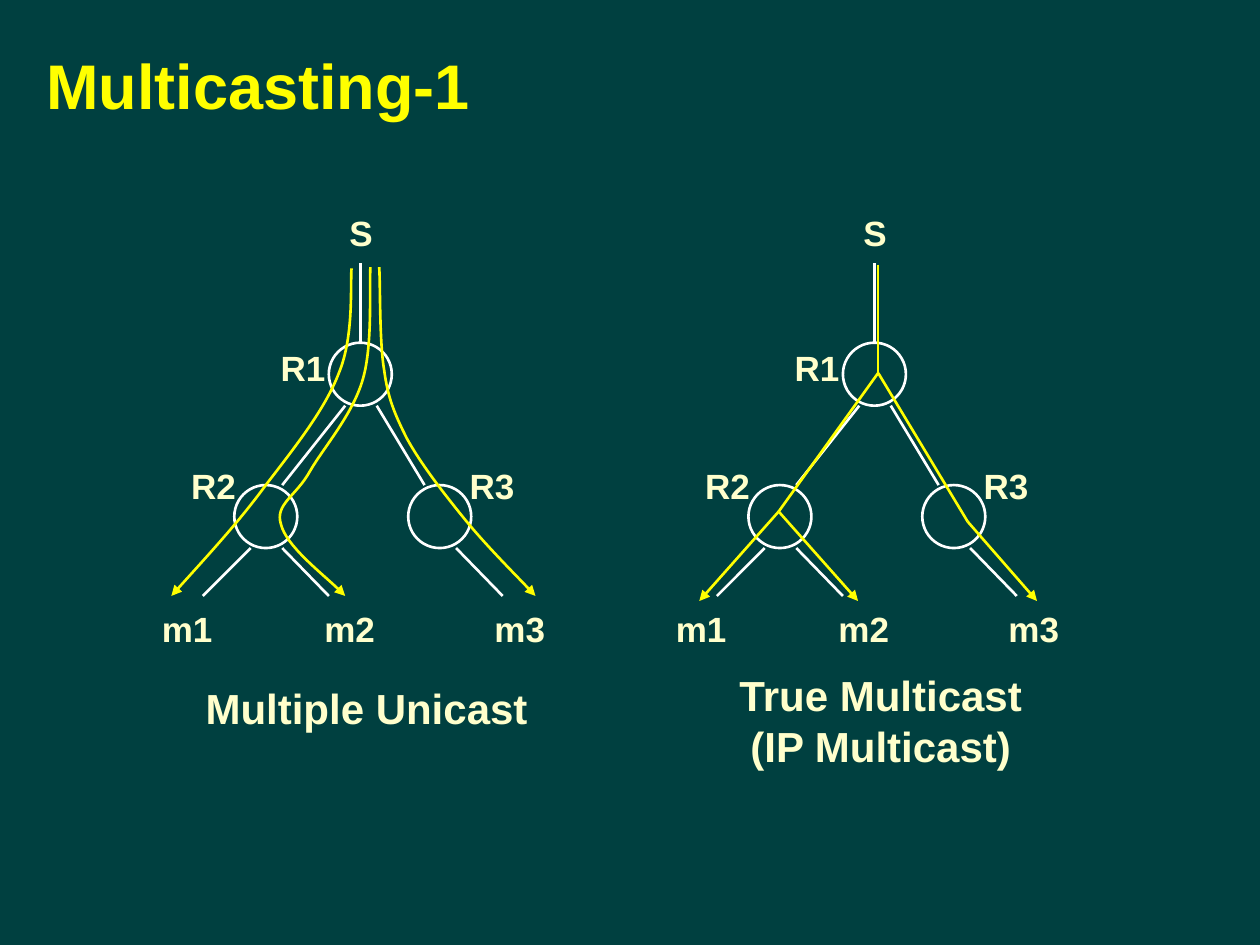
from lxml import etree
from pptx import Presentation
from pptx.dml.color import RGBColor
from pptx.enum.shapes import MSO_CONNECTOR, MSO_SHAPE
from pptx.enum.text import MSO_ANCHOR, PP_ALIGN
from pptx.oxml.ns import qn
from pptx.util import Inches, Pt

STRAIGHT = MSO_CONNECTOR.STRAIGHT
OVAL = MSO_SHAPE.OVAL
MIDDLE = MSO_ANCHOR.MIDDLE
CENTER = PP_ALIGN.CENTER

COLORS = {"background": "004040", "title": "FFFF00", "text": "FFFFCC",
          "link": "FFFFFF", "flow": "FFFF00"}
FONT = "Arial"
LINE_WIDTH = 1.5

TREE_LEFTS = (0.98, 5.06)
ROUTER_SIZE = 0.5
ROUTERS = [(1.63, 2.72), (0.88, 3.85), (2.26, 3.85)]
LABELS = [
    ("S", 1.51, 1.47, 0.75, 0.75),
    ("m1", 0, 4.48, 1.01, 1.01),
    ("m2", 1.29, 4.48, 1.01, 1.01),
    ("m3", 2.64, 4.48, 1.01, 1.01),
    ("R1", 1.11, 2.65, 0.63, 0.53),
    ("R2", 0.4, 3.59, 0.63, 0.53),
    ("R3", 2.61, 3.59, 0.63, 0.53),
]
LINKS = [
    ((1.88, 2.09), (1.88, 2.72)),
    ((1.76, 3.22), (1.26, 3.85)),
    ((2.01, 3.22), (2.39, 3.85)),
    ((1.01, 4.35), (0.63, 4.73)),
    ((1.26, 4.35), (1.63, 4.73)),
    ((2.64, 4.35), (3.01, 4.73)),
]
CAPTIONS = [("Multiple Unicast", 0.6), ("True Multicast\v(IP Multicast)", 0.79)]
UNICAST_FLOWS = [
    [(2.79, 2.13), (2.78, 2.27), (2.81, 2.67), (2.69, 2.96), (2.58, 3.25),
     (2.34, 3.55), (2.11, 3.85), (1.89, 4.15), (1.62, 4.44), (1.36, 4.73)],
    [(2.94, 2.12), (2.93, 2.27), (2.96, 2.74), (2.88, 3.01), (2.8, 3.29),
     (2.57, 3.55), (2.46, 3.74), (2.35, 3.94), (2.18, 4), (2.23, 4.16),
     (2.27, 4.33), (2.63, 4.61), (2.74, 4.73)],
    [(3.01, 2.12), (3.02, 2.25), (3.01, 2.71), (3.05, 2.94), (3.08, 3.16),
     (3.13, 3.28), (3.23, 3.48), (3.34, 3.68), (3.51, 3.9), (3.68, 4.11),
     (3.85, 4.32), (4.13, 4.6), (4.25, 4.73)],
]
SOURCE, FORK, LEFT_FORK, RIGHT_BEND = (6.97, 2.1), (6.97, 2.96), (6.18, 4.06), (7.68, 4.14)
MULTICAST_FLOWS = [
    (SOURCE, FORK, False),
    (FORK, LEFT_FORK, False),
    (LEFT_FORK, (5.55, 4.77), True),
    (LEFT_FORK, (6.81, 4.77), True),
    (FORK, RIGHT_BEND, False),
    (RIGHT_BEND, (8.23, 4.77), True),
]


def add_text(slide, text, left, top, width, height, size, color="text"):
    box = slide.shapes.add_textbox(*map(Inches, (left, top, width, height)))
    frame = box.text_frame
    frame.word_wrap = True
    frame.vertical_anchor = MIDDLE
    frame.margin_left = frame.margin_right = frame.margin_top = frame.margin_bottom = 0
    paragraph = frame.paragraphs[0]
    paragraph.text = text
    paragraph.alignment = CENTER
    for run in paragraph.runs:
        run.font.name = FONT
        run.font.size = Pt(size)
        run.font.bold = True
        run.font.color.rgb = RGBColor.from_string(COLORS[color])


def style_line(shape, color, arrow=False):
    shape.line.color.rgb = RGBColor.from_string(COLORS[color])
    shape.line.width = Pt(LINE_WIDTH)
    if arrow:
        line = shape._element.spPr.find(qn("a:ln"))
        etree.SubElement(line, qn("a:tailEnd"), type="triangle")


def add_line(slide, start, end, color, arrow=False):
    connector = slide.shapes.add_connector(STRAIGHT, *map(Inches, start + end))
    style_line(connector, color, arrow)
    etree.SubElement(connector._element.spPr, qn("a:effectLst"))


def add_router(slide, left, top):
    router = slide.shapes.add_shape(OVAL, *map(Inches, (left, top, ROUTER_SIZE, ROUTER_SIZE)))
    router.shadow.inherit = False
    router.fill.background()
    style_line(router, "link")


def add_curve(slide, controls):
    start, *points = [tuple(map(Inches, point)) for point in controls]
    builder = slide.shapes.build_freeform(*start)
    builder.add_line_segments(points, close=False)
    curve = builder.convert_to_shape()
    segments = list(curve._element.iter(qn("a:lnTo")))
    outline = segments[0].getparent()
    for first in range(0, len(segments), 3):
        bezier = etree.SubElement(outline, qn("a:cubicBezTo"))
        for segment in segments[first:first + 3]:
            bezier.append(segment[0])
            outline.remove(segment)
    curve.shadow.inherit = False
    curve.fill.background()
    style_line(curve, "flow", arrow=True)


def add_tree(slide, left, caption, caption_height):
    add_text(slide, caption, left + 0.55, 5.32, 2.76, caption_height, 24)
    for x, y in ROUTERS:
        add_router(slide, left + x, y)
    for (x1, y1), (x2, y2) in LINKS:
        add_line(slide, (left + x1, y1), (left + x2, y2), "link")
    for text, x, y, width, height in LABELS:
        add_text(slide, text, left + x, y, width, height, 20)


def main():
    presentation = Presentation()
    presentation.slide_width, presentation.slide_height = Inches(10), Inches(7.5)
    slide = presentation.slides.add_slide(presentation.slide_layouts[6])
    slide.background.fill.solid()
    slide.background.fill.fore_color.rgb = RGBColor.from_string(COLORS["background"])
    add_text(slide, "Multicasting-1", 0.2, 0.21, 3.7, 0.92, 36, "title")
    for left, (caption, height) in zip(TREE_LEFTS, CAPTIONS):
        add_tree(slide, left, caption, height)
    for controls in UNICAST_FLOWS:
        add_curve(slide, controls)
    for start, end, arrow in MULTICAST_FLOWS:
        add_line(slide, start, end, "flow", arrow)
    presentation.save("out.pptx")


if __name__ == "__main__":
    main()
